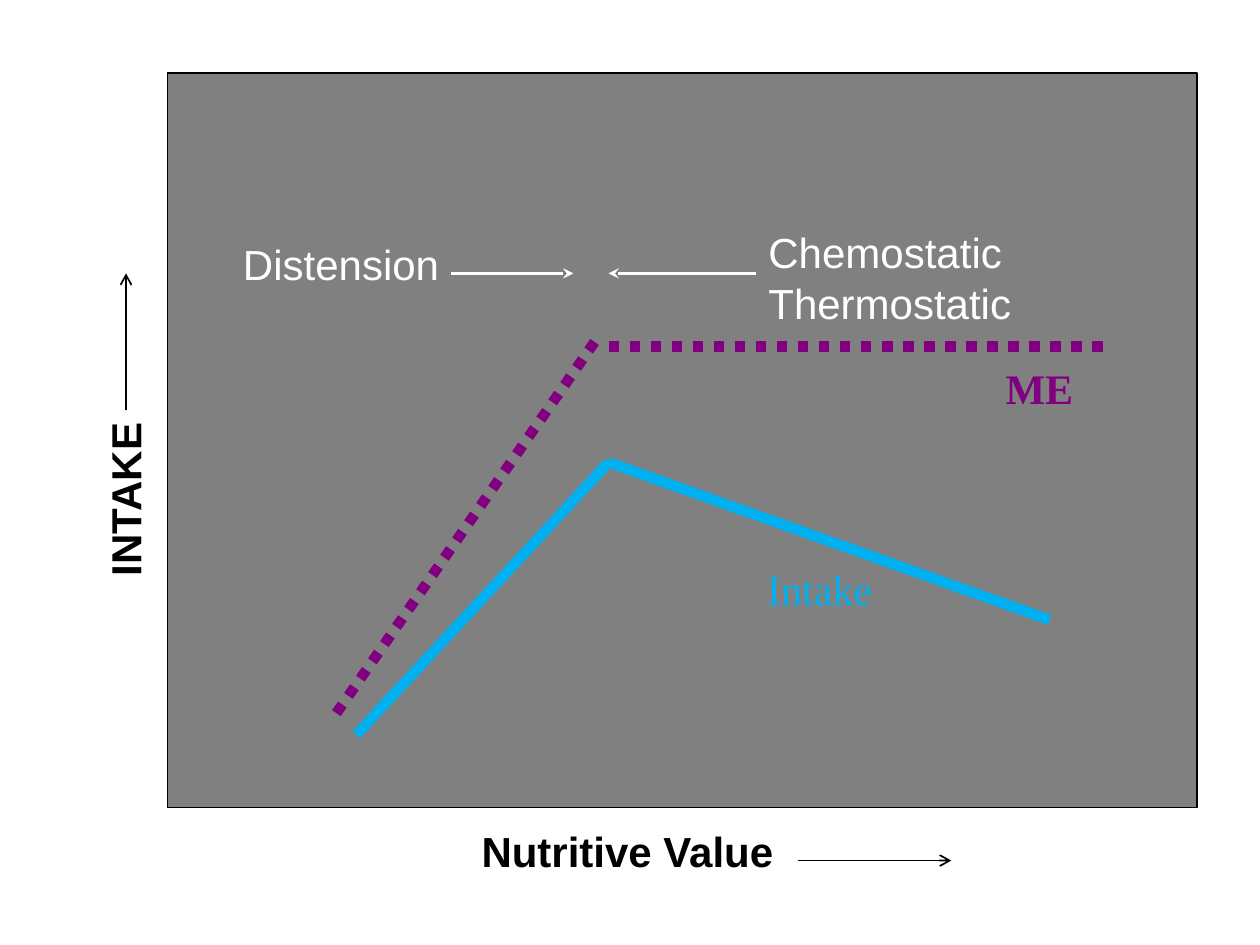
from dataclasses import dataclass

from lxml.etree import SubElement
from pptx import Presentation
from pptx.dml.color import RGBColor
from pptx.enum.dml import MSO_LINE
from pptx.enum.shapes import MSO_CONNECTOR, MSO_SHAPE
from pptx.enum.text import PP_ALIGN
from pptx.oxml.ns import qn
from pptx.util import Inches, Pt


@dataclass(frozen=True)
class Theme:
    black: str = "000000"
    white: str = "FFFFFF"
    gray: str = "808080"
    blue: str = "00B0F0"
    purple: str = "800080"
    sans: str = "Arial"
    serif: str = "Times New Roman"
    size: int = 24
    thin: int = 1
    mid: int = 2
    thick: int = 6


theme = Theme()
deck = Presentation()
deck.slide_width, deck.slide_height = Inches(10), Inches(7.5)
slide = deck.slides.add_slide(deck.slide_layouts[6])
shapes = slide.shapes


def add_line(start, end, color, width, head=None, dash=None):
    line = shapes.add_connector(
        MSO_CONNECTOR.STRAIGHT, *[Inches(v) for v in (*start, *end)])
    line.line.color.rgb = RGBColor.from_string(color)
    line.line.width = Pt(width)
    if dash:
        line.line.dash_style = dash
    props = line._element.spPr
    if head:
        SubElement(props.find(qn("a:ln")), qn("a:tailEnd"), type=head)
    SubElement(props, qn("a:effectLst"))


def add_label(words, spot, color, font=theme.sans, bold=False,
              align=PP_ALIGN.LEFT, wrap=False, turn=0):
    """Add a text box with one paragraph for each of the words."""
    box = shapes.add_textbox(*[Inches(v) for v in spot])
    box.rotation = turn
    frame = box.text_frame
    frame.word_wrap = wrap
    for i, word in enumerate(words):
        para = frame.add_paragraph() if i else frame.paragraphs[0]
        para.alignment = align
        run = para.add_run()
        run.text = word
        run.font.name = font
        run.font.size = Pt(theme.size)
        run.font.bold = bold
        run.font.color.rgb = RGBColor.from_string(color)


# Plot area
plot = shapes.add_shape(MSO_SHAPE.RECTANGLE, Inches(1.33), Inches(0.58),
                        Inches(8.17), Inches(5.83))
plot.shadow.inherit = False
plot.fill.solid()
plot.fill.fore_color.rgb = RGBColor.from_string(theme.gray)
plot.line.color.rgb = RGBColor.from_string(theme.black)
plot.line.width = Pt(theme.thin)

# Curves
peak = (4.83, 3.67)
for end in ((2.83, 5.83), (8.33, 4.92)):
    first, last = sorted((peak, end))
    add_line(first, last, theme.blue, theme.thick)
for start, end in (((2.67, 5.66), (4.75, 2.67)), ((4.83, 2.75), (8.75, 2.75))):
    add_line(start, end, theme.purple, theme.thick, dash=MSO_LINE.ROUND_DOT)
add_label(["ME"], (7.75, 2.83, 1, 0.5), theme.purple, theme.serif,
          bold=True, align=PP_ALIGN.CENTER, wrap=True)
add_label(["Intake"], (5.92, 4.42, 1.17, 0.5), theme.blue, theme.serif,
          align=PP_ALIGN.CENTER, wrap=True)

# Control zones on both sides of the peak
add_label(["Distension"], (1.83, 1.84, 1.78, 0.51), theme.white)
add_label(["Chemostatic", "Thermostatic"], (6, 1.75, 2.15, 0.91), theme.white)
for start, end in ((3.58, 4.55), (6, 4.83)):
    add_line((start, 2.17), (end, 2.17), theme.white, theme.mid, "stealth")

# Axes
add_label(["INTAKE"], (0.28, 3.7, 1.43, 0.51), theme.black, bold=True, turn=270)
add_label(["Nutritive Value"], (3.71, 6.5, 2.54, 0.5), theme.black,
          bold=True, align=PP_ALIGN.CENTER)
for start, end in (((1, 3.25), (1, 2.17)), ((6.33, 6.83), (7.55, 6.83))):
    add_line(start, end, theme.black, theme.thin, "arrow")

deck.save("out.pptx")
